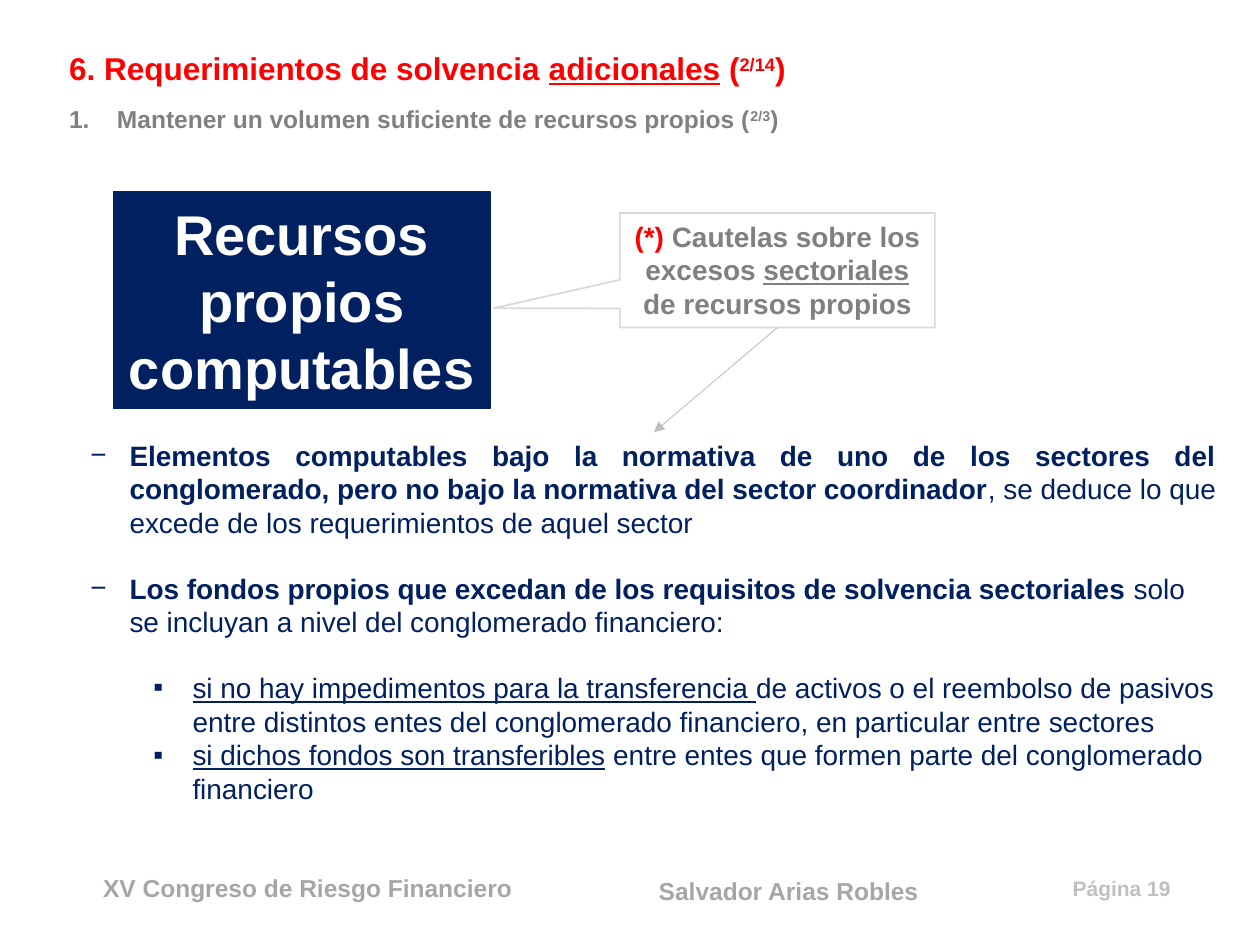
from lxml import etree
from pptx import Presentation
from pptx.dml.color import RGBColor
from pptx.enum.shapes import MSO_CONNECTOR, MSO_SHAPE
from pptx.enum.text import MSO_ANCHOR, PP_ALIGN
from pptx.oxml.ns import qn
from pptx.util import Inches, Pt

RECT, CALLOUT = MSO_SHAPE.RECTANGLE, MSO_SHAPE.RECTANGULAR_CALLOUT
STRAIGHT = MSO_CONNECTOR.STRAIGHT
LEFT, MID, RIGHT, FULL = (PP_ALIGN.LEFT, PP_ALIGN.CENTER,
                          PP_ALIGN.RIGHT, PP_ALIGN.JUSTIFY)
TOP, CENTER = MSO_ANCHOR.TOP, MSO_ANCHOR.MIDDLE
COLORS = {"navy": "002060", "red": "FF0000", "gray": "808080",
          "foot": "A6A6A6", "page": "C0C0C0", "edge": "D9D9D9",
          "arrow": "BFBFBF", "white": "FFFFFF"}
GAP = 18.4  # one line of 16 pt text


def rgb(name):
    return RGBColor.from_string(COLORS[name])


def add_bullet(para, mark, margin, hang):
    props = para._p.get_or_add_pPr()
    props.set("marL", str(Inches(margin)))
    props.set("indent", str(-Inches(hang)))
    if mark == "1.":
        etree.SubElement(props, qn("a:buAutoNum"), type="arabicPeriod")
    else:
        etree.SubElement(props, qn("a:buFont"), typeface="Arial")
        etree.SubElement(props, qn("a:buChar"), char=mark)


def write(para, text, size=16, color="navy", bold=False, line=False,
          high=False):
    run = para.add_run()
    run.text = text
    font = run.font
    font.name, font.size, font.bold = "Arial", Pt(size), bold
    font.underline = line
    font.color.rgb = rgb(color)
    if high:
        run._r.get_or_add_rPr().set("baseline", "30000")


def fill_para(para, parts, align=LEFT, bullet=None, level=0, before=0, **base):
    """Write parts, each a string or a (string, format) pair, over a base format."""
    para.level = level
    if bullet:
        add_bullet(para, *bullet)
    para.alignment = align
    if before:
        para.space_before = Pt(before)
    for part in parts:
        text, own = (part, {}) if isinstance(part, str) else part
        write(para, text, **{**base, **own})


def add_text(slide, box, parts, wrap=True, **style):
    frame = slide.shapes.add_textbox(*map(Inches, box)).text_frame
    frame.word_wrap = wrap
    fill_para(frame.paragraphs[0], parts, **style)
    return frame


def add_box(slide, kind, box, parts, fill, edge, width, **style):
    shape = slide.shapes.add_shape(kind, *map(Inches, box))
    shape.shadow.inherit = False
    if fill:
        shape.fill.solid()
        shape.fill.fore_color.rgb = rgb(fill)
    else:
        shape.fill.background()
    shape.line.color.rgb = rgb(edge)
    shape.line.width = Pt(width)
    frame = shape.text_frame
    frame.word_wrap = True
    frame.vertical_anchor = CENTER if fill else TOP
    fill_para(frame.paragraphs[0], parts, align=MID, bold=True, **style)
    return shape


def add_arrow(slide, shape, x, y):
    """Draw an arrow from the bottom of a shape to a point."""
    arrow = slide.shapes.add_connector(STRAIGHT, 0, 0, Inches(x), Inches(y))
    arrow.begin_connect(shape, 2)
    arrow.line.color.rgb = rgb("arrow")
    arrow.line.width = Pt(0.5)
    etree.SubElement(arrow.line._get_or_add_ln(), qn("a:tailEnd"),
                     type="triangle")
    etree.SubElement(arrow._element.spPr, qn("a:effectLst"))


def add_body(slide):
    dash = dict(bullet=("−", 0.31, 0.31))
    square = dict(bullet=("▪", 0.81, 0.31), level=1)
    bold, under = {"bold": True}, {"line": True}
    frame = add_text(slide, (0.62, 3.43, 9.13, 3.33), [
        ("Elementos computables bajo la normativa de uno de los sectores del "
         "conglomerado, pero no bajo la normativa del sector coordinador", bold),
        ", se deduce lo que excede de los requerimientos de aquel sector",
    ], align=FULL, **dash)
    items = [
        ([("Los fondos propios que excedan de los requisitos de solvencia "
           "sectoriales", bold),
          " solo se incluyan a nivel del conglomerado financiero:"], GAP, dash),
        ([("si no hay impedimentos para la transferencia ", under),
          "de activos o el reembolso de pasivos entre distintos entes del "
          "conglomerado financiero, en particular entre sectores"], GAP, square),
        ([("si dichos fondos son transferibles", under),
          " entre entes que formen parte del conglomerado financiero"],
         0, square),
    ]
    for parts, before, style in items:
        fill_para(frame.add_paragraph(), parts, before=before, **style)


def add_footer(slide):
    foot = dict(size=14, color="foot", bold=True)
    add_text(slide, (0.72, 6.88, 3.47, 0.34),
             ["XV Congreso de Riesgo Financiero"], **foot)
    add_text(slide, (5.13, 6.9, 2.26, 0.34), ["Salvador Arias Robles"], **foot)
    add_text(slide, (8.29, 6.9, 1.1, 0.3), ["Página 19"], wrap=False,
             align=RIGHT, size=12, color="page", bold=True)


def main():
    prs = Presentation()
    prs.slide_width, prs.slide_height = Inches(10), Inches(7.5)
    slide = prs.slides.add_slide(prs.slide_layouts[6])
    add_footer(slide)
    add_text(slide, (0.45, 0.34, 5.98, 0.4), [
        "6. Requerimientos de solvencia ", ("adicionales", {"line": True}),
        " (", ("2/14", {"high": True}), ")",
    ], wrap=False, size=18, color="red", bold=True)
    add_text(slide, (0.45, 0.78, 6.08, 0.34), [
        "Mantener un volumen suficiente de recursos propios (",
        ("2/3", {"high": True}), ")",
    ], bullet=("1.", 0.38, 0.38), size=14, color="gray", bold=True)
    add_box(slide, RECT, (0.9, 1.52, 2.99, 1.72),
            ["Recursos propios computables"],
            "navy", "navy", 0.75, size=32, color="white")
    add_body(slide)
    note = add_box(slide, CALLOUT, (4.92, 1.69, 2.5, 0.91), [
        ("(*)", {"color": "red"}), " Cautelas sobre los excesos ",
        ("sectoriales", {"line": True}), " de recursos propios",
    ], None, "edge", 1, color="gray")
    note.adjustments[0], note.adjustments[1] = -0.9, 0.33
    add_arrow(slide, note, 5.19, 3.43)
    prs.save("out.pptx")


if __name__ == "__main__":
    main()
